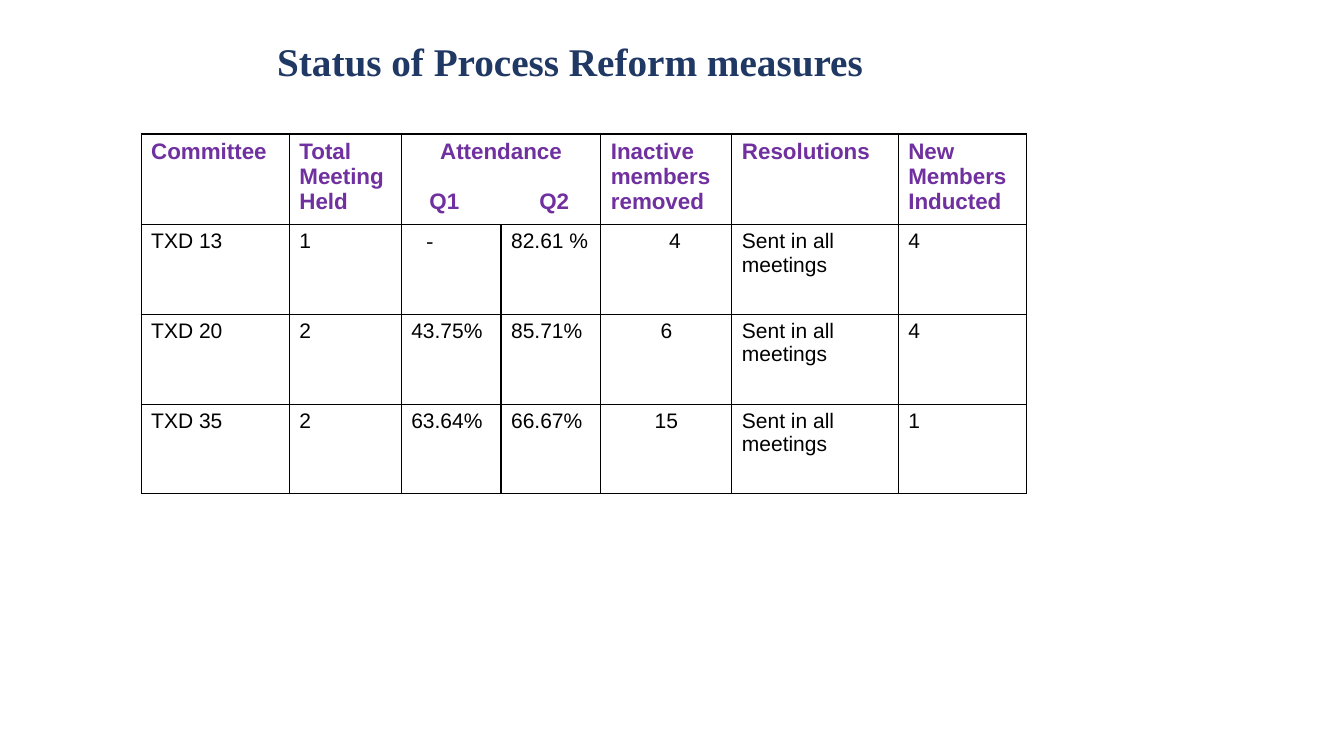
from lxml.etree import SubElement
from pptx import Presentation
from pptx.dml.color import RGBColor
from pptx.enum.text import MSO_ANCHOR, PP_ALIGN
from pptx.oxml import parse_xml
from pptx.oxml.ns import nsdecls, qn
from pptx.util import Inches, Pt

NAVY = RGBColor(0x20, 0x38, 0x64)
PURPLE = RGBColor(0x70, 0x30, 0xA0)
BLACK = RGBColor(0, 0, 0)

TITLE = {"name": "Times New Roman", "size": Pt(28), "bold": True, "color": NAVY}
HEADER = {"name": "Arial", "size": Pt(16), "bold": True, "color": PURPLE}
BODY = {"name": "Arial", "size": Pt(15), "bold": False, "color": BLACK}
DASH = {**BODY, "name": "Times New Roman"}

COLUMN_WIDTHS = [1.47, 1.11, 0.99, 0.99, 1.3, 1.65, 1.27]
ROW_HEIGHTS = [0.9, 0.89, 0.89, 0.89]
HEADINGS = ["Committee", "Total Meeting Held", "Attendance", "",
            "Inactive members removed", "Resolutions", "New Members Inducted"]
COMMITTEES = [
    ["TXD 13", "1", "-", "82.61 %", "4", "Sent in all meetings", "4"],
    ["TXD 20", "2", "43.75%", "85.71%", "6", "Sent in all meetings", "4"],
    ["TXD 35", "2", "63.64%", "66.67%", "15", "Sent in all meetings", "1"],
]
ATTENDANCE_COLUMN, REMOVED_COLUMN = 2, 4


class ReformSlide:
    """Draws styled text and bordered tables on one slide."""

    def __init__(self, deck):
        self.slide = deck.slides.add_slide(deck.slide_layouts[6])

    def add_span(self, para, text, style):
        span = para.add_run()
        span.text = text
        for name, value in style.items():
            if name == "color":
                span.font.color.rgb = value
            else:
                setattr(span.font, name, value)

    def title(self, text, left, top, width, height):
        box = self.slide.shapes.add_textbox(
            Inches(left), Inches(top), Inches(width), Inches(height))
        frame = box.text_frame
        frame.word_wrap = True
        frame.vertical_anchor = MSO_ANCHOR.BOTTOM
        para = frame.paragraphs[0]
        para.line_spacing = 0.9
        self.add_span(para, text, TITLE)

    def border(self, cell):
        for position, side in enumerate(("lnL", "lnR", "lnT", "lnB")):
            line = parse_xml(
                f'<a:{side} {nsdecls("a")} w="12700"><a:solidFill>'
                f'<a:srgbClr val="{BLACK}"/></a:solidFill></a:{side}>')
            cell._tc.get_or_add_tcPr().insert(position, line)

    def table(self, rows, left, top):
        frame = self.slide.shapes.add_table(
            len(rows), len(COLUMN_WIDTHS), Inches(left), Inches(top),
            Inches(sum(COLUMN_WIDTHS)), Inches(sum(ROW_HEIGHTS)))
        table = frame.table
        table.first_row = table.horz_banding = False
        for column, width in zip(table.columns, COLUMN_WIDTHS):
            column.width = Inches(width)
        for row, height in zip(table.rows, ROW_HEIGHTS):
            row.height = Inches(height)
        for row_index, texts in enumerate(rows):
            for column_index, text in enumerate(texts):
                cell = table.cell(row_index, column_index)
                cell.fill.background()
                self.border(cell)
                if text:
                    style = BODY if row_index else HEADER
                    self.add_span(cell.text_frame.paragraphs[0], text,
                                  DASH if text == "-" else style)
        return table

    def quarters(self, cell):
        cell.text_frame.paragraphs[0].alignment = PP_ALIGN.CENTER
        para = cell.text_frame.add_paragraph()
        para.alignment = PP_ALIGN.LEFT
        para.space_before = Pt(18)
        stops = SubElement(para._p.get_or_add_pPr(), qn("a:tabLst"))
        for position in (0.18, 1.27):
            SubElement(stops, qn("a:tab"), pos=str(Inches(position)), algn="l")
        self.add_span(para, "\tQ1\tQ2", HEADER)

    def indent(self, cell, distance):
        properties = cell.text_frame.paragraphs[0]._p.get_or_add_pPr()
        properties.set("marL", str(Inches(distance)))


def main():
    deck = Presentation()
    deck.slide_width, deck.slide_height = Inches(13.33), Inches(7.5)
    page = ReformSlide(deck)
    table = page.table([HEADINGS, *COMMITTEES], 1.4, 1.33)
    attendance = table.cell(0, ATTENDANCE_COLUMN)
    attendance.merge(table.cell(0, ATTENDANCE_COLUMN + 1))
    page.quarters(attendance)
    for row_index in range(1, len(ROW_HEIGHTS)):
        removed = table.cell(row_index, REMOVED_COLUMN)
        removed.text_frame.paragraphs[0].alignment = PP_ALIGN.CENTER
    page.indent(table.cell(1, ATTENDANCE_COLUMN), 0.15)
    page.indent(table.cell(1, REMOVED_COLUMN), 0.17)
    page.title("Status of Process Reform measures", 2.65, 0.16, 7.12, 0.73)
    deck.save("out.pptx")


if __name__ == "__main__":
    main()
